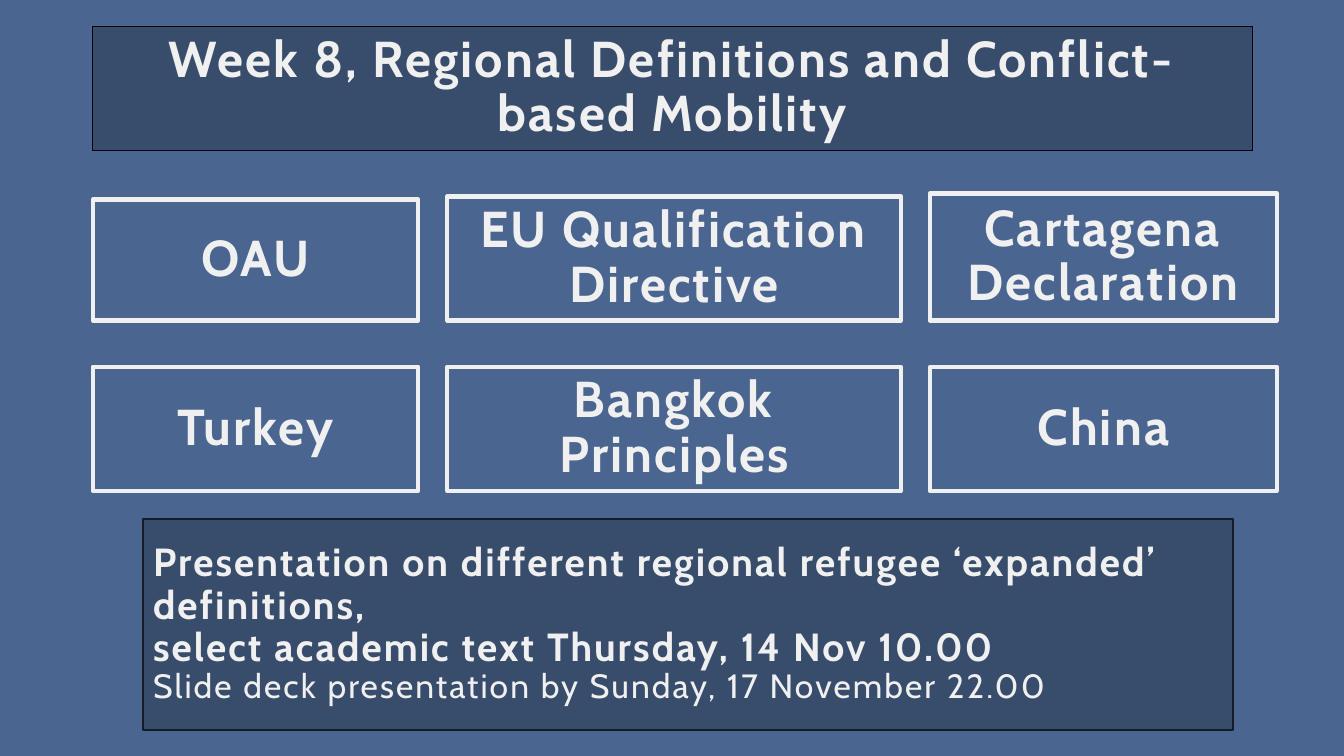
import pptx
import pptx.dml.color
import pptx.enum.shapes
import pptx.enum.text
import pptx.util

RGBColor = pptx.dml.color.RGBColor
BLUE = RGBColor(0x4A, 0x65, 0x90)
NAVY = RGBColor(0x38, 0x4C, 0x6C)
OFF_WHITE = RGBColor(0xF1, 0xF0, 0xF0)
BLACK = RGBColor(0x00, 0x00, 0x00)
INK = RGBColor(0x16, 0x1C, 0x23)

CENTER = pptx.enum.text.PP_ALIGN.CENTER
LEFT = pptx.enum.text.PP_ALIGN.LEFT


class Deck:
    """Holds the style and the current slide; boxes are in percent of the slide."""

    font = "Cabin"
    tracking = 150  # hundredths of a point

    def __init__(self):
        self.prs = pptx.Presentation()
        self.prs.slide_width = pptx.util.Inches(13.33)
        self.prs.slide_height = pptx.util.Inches(7.5)

    def add_slide(self):
        self.s = self.prs.slides.add_slide(self.prs.slide_layouts[5])
        fill = self.s.background.fill
        fill.solid()
        fill.fore_color.rgb = BLUE

    def place(self, box):
        w, h = self.prs.slide_width, self.prs.slide_height
        return [int(share * side / 100) for share, side in zip(box, (w, h, w, h))]

    def paint(self, sp, line, width, fill=None):
        if fill is None:
            sp.fill.background()
        else:
            sp.fill.solid()
            sp.fill.fore_color.rgb = fill
        sp.line.color.rgb = line
        sp.line.width = pptx.util.Pt(width)

    def set_text(self, sp, lines, align):
        """Each line is (text, size, bold)."""
        tf = sp.text_frame
        tf.text = "\n".join(text for text, _, _ in lines)
        tf.word_wrap = True
        tf.auto_size = pptx.enum.text.MSO_AUTO_SIZE.NONE
        tf.vertical_anchor = pptx.enum.text.MSO_ANCHOR.MIDDLE
        for p, (_, size, bold) in zip(tf.paragraphs, lines):
            p.alignment = align
            p.line_spacing = 0.9
            for r in p.runs:
                r.font.name = self.font
                r.font.size = pptx.util.Pt(size)
                r.font.bold = bold
                r.font.color.rgb = OFF_WHITE
                r.font._element.set("spc", str(self.tracking))

    def title(self, box, text):
        sp = self.s.shapes.title
        sp.left, sp.top, sp.width, sp.height = self.place(box)
        self.paint(sp, BLACK, 0.75, NAVY)
        self.set_text(sp, [(text, 36, True)], CENTER)

    def rect(self, box):
        shape_type = pptx.enum.shapes.MSO_SHAPE.RECTANGLE
        sp = self.s.shapes.add_shape(shape_type, *self.place(box))
        sp.shadow.inherit = False
        return sp

    def card(self, box, text):
        sp = self.rect(box)
        self.paint(sp, OFF_WHITE, 3)
        self.set_text(sp, [(text, 36, True)], CENTER)

    def note(self, box, lines):
        sp = self.rect(box)
        self.paint(sp, INK, 1, NAVY)
        self.set_text(sp, lines, LEFT)


def main():
    deck = Deck()
    deck.add_slide()
    margin, gap = 6.9, 2.15

    # Title band
    deck.title((margin, 3.47, 86.27, 16.4),
               "Week 8, Regional Definitions and Conflict-based Mobility")

    # Regional instruments: three columns, rows aligned on their bottom edges
    widths = (24.23, 33.76, 25.81)
    rows = (
        (42.4, (16, 16.4, 16.8),
         ("OAU", "EU Qualification Directive", "Cartagena Declaration")),
        (64.93, (16.4, 16.4, 16.4),
         ("Turkey", "Bangkok Principles", "China")),
    )
    for bottom, heights, names in rows:
        left = margin
        for width, height, name in zip(widths, heights, names):
            deck.card((left, bottom - height, width, height), name)
            left += width + gap

    # Assignment details
    deck.note((10.65, 68.67, 81.1, 27.87), [
        ("Presentation on different regional refugee ‘expanded’ definitions,", 28, True),
        ("select academic text Thursday, 14 Nov 10.00", 28, True),
        ("Slide deck presentation by Sunday, 17 November 22.00", 24, False),
    ])

    deck.prs.save("out.pptx")


if __name__ == "__main__":
    main()
